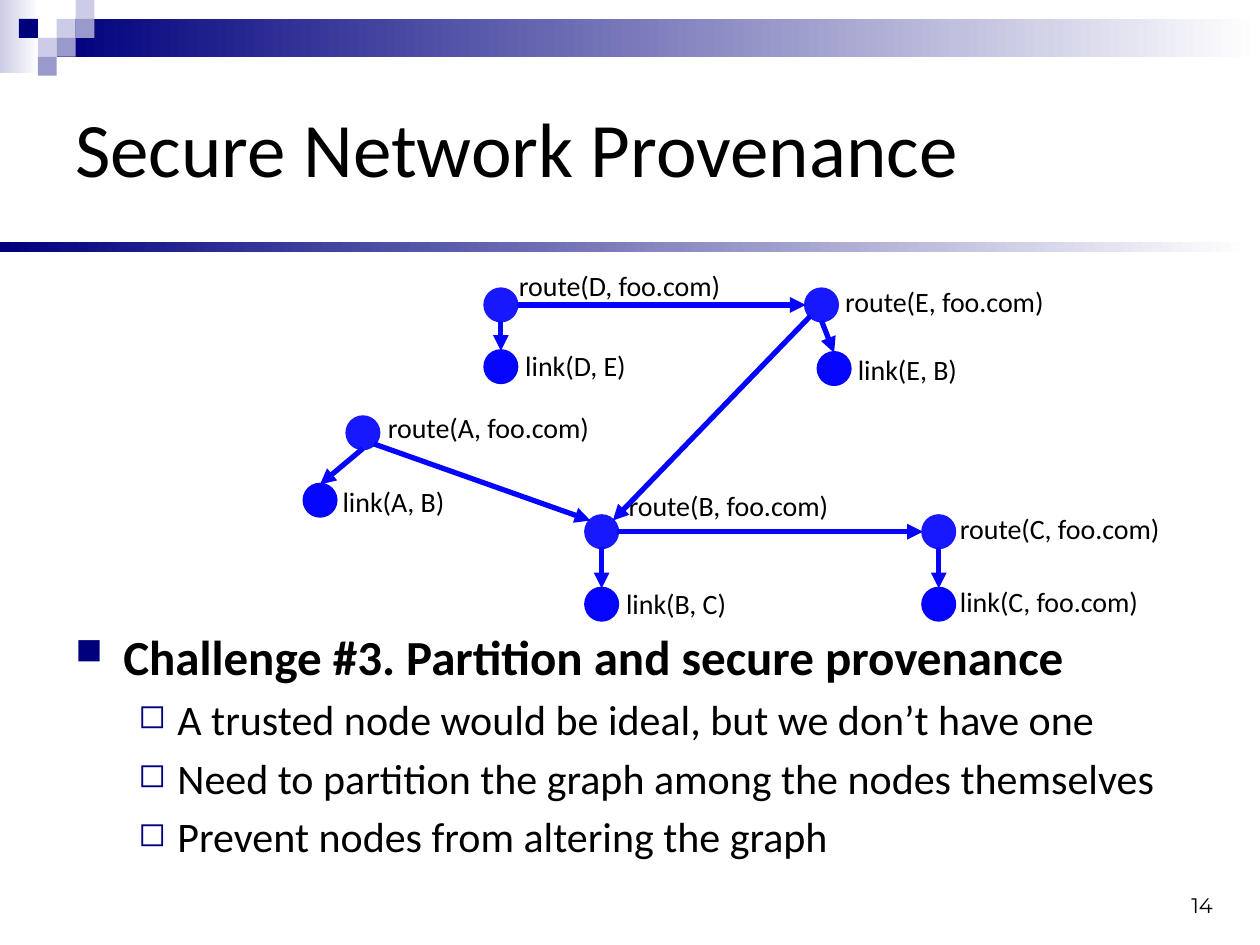
from math import cos, radians, sin

from lxml import etree
from pptx import Presentation
from pptx.dml.color import RGBColor
from pptx.enum.shapes import MSO_CONNECTOR, MSO_SHAPE
from pptx.enum.text import MSO_ANCHOR, MSO_AUTO_SIZE, PP_ALIGN
from pptx.oxml.ns import qn
from pptx.util import Inches, Pt

RECTANGLE, OVAL = MSO_SHAPE.RECTANGLE, MSO_SHAPE.OVAL
STRAIGHT = MSO_CONNECTOR.STRAIGHT
TOP, MIDDLE, BOTTOM = MSO_ANCHOR.TOP, MSO_ANCHOR.MIDDLE, MSO_ANCHOR.BOTTOM
GROW = MSO_AUTO_SIZE.SHAPE_TO_FIT_TEXT
CENTER = PP_ALIGN.CENTER

COLUMNS, ROWS = 100, 75  # square cells of a tenth of an inch
SQUARE = 1.5
RADIUS = 1.25
COLORS = {
    "navy": "00007D", "lilac": "9999CC", "pale": "CCCCE6", "white": "FFFFFF",
    "route": "1818FF", "link": "0505FF", "text": "000000",
}

BANDS = [  # left, top, width, height, first colour
    (0, 0, 3.1, 5.8, "pale"),
    (4.5, 1.5, 95.5, 3, "navy"),
    (0, 19.2, 99.2, 0.8, "navy"),
]
SQUARES = [  # column and row of the corner mosaic, colour
    (3, 1, "pale"), (4, 0, "pale"), (4, 1, "lilac"), (2, 2, "pale"),
    (1, 1, "navy"), (3, 2, "lilac"), (2, 3, "lilac"),
]
NODES = {  # centre, label's left and top, label's width, label
    "route C": (74.5, 42.2, 75.2, 40.1, 18.1, "route(C, foo.com)"),
    "link C": (74.5, 47.95, 75.2, 45.9, 16.3, "link(C, foo.com)"),
    "route B": (47.75, 42.2, 48.9, 38.3, 18.1, "route(B, foo.com)"),
    "link B": (47.75, 47.95, 48.7, 46.1, 10.1, "link(B, C)"),
    "route A": (28.8, 34.35, 29.8, 32.1, 18.2, "route(A, foo.com)"),
    "link A": (25.4, 39.7, 26.2, 38, 10.2, "link(A, B)"),
    "route D": (39.75, 24.2, 40.2, 20.8, 18.2, "route(D, foo.com)"),
    "link D": (39.75, 29.1, 40.7, 27.2, 10.1, "link(D, E)"),
    "route E": (65.2, 24.2, 66.1, 22.1, 18, "route(E, foo.com)"),
    "link E": (66.2, 29.25, 67.1, 27.5, 10, "link(E, B)"),
}
ANGLES = {  # clockwise from the right, in degrees
    "right": 0, "bottom right": 45, "bottom": 90, "bottom left": 135,
    "left": 180, "top left": 225, "top": 270, "top right": 315,
}
ARROWS = [(f"route {name}", "bottom", f"link {name}", "top") for name in "ABCDE"] + [
    ("route A", "bottom right", "route B", "top left"),
    ("route B", "right", "route C", "left"),
    ("route D", "right", "route E", "left"),
    ("route E", "bottom left", "route B", "top right"),
]
CHALLENGE = "Challenge #3. Partition and secure provenance"
POINTS = [
    "A trusted node would be ideal, but we don’t have one",
    "Need to partition the graph among the nodes themselves",
    "Prevent nodes from altering the graph",
]


def cells(*counts):
    return [Inches(count / 10) for count in counts]


def color(name):
    return RGBColor.from_string(COLORS[name])


def add_filled(page, kind, place, fill):
    shape = page.shapes.add_shape(kind, *cells(*place))
    shape.shadow.inherit = False
    shape.fill.solid()
    shape.fill.fore_color.rgb = color(fill)
    shape.line.fill.background()
    return shape


def add_band(page, left, top, width, height, start):
    band = add_filled(page, RECTANGLE, (left, top, width, height), start)
    band.fill.gradient()
    band.fill.gradient_angle = 0
    for stop, name, position in zip(band.fill.gradient_stops, (start, "white"), (0, 1)):
        stop.color.rgb = color(name)
        stop.position = position


def style(para, size, font="Calibri", bold=False):
    para.font.size = Pt(size)
    para.font.name = font
    para.font.bold = bold
    para.font.color.rgb = color("text")


def add_text(page, place, text, size, font="Calibri", anchor=TOP, wrap=True):
    box = page.shapes.add_textbox(*cells(*place))
    frame = box.text_frame
    frame.word_wrap = wrap
    frame.vertical_anchor = anchor
    para = frame.paragraphs[0]
    para.text = text
    style(para, size, font)
    return frame


def add_bullet(para, mark, percent, margin, indent):
    """Hang a navy mark before the paragraph, with space above it by share of text size."""
    props = para._p.get_or_add_pPr()
    props.set("marL", str(Inches(margin)))
    props.set("indent", str(Inches(-indent)))
    before = etree.SubElement(props, qn("a:spcBef"))
    etree.SubElement(before, qn("a:spcPct"), val="20000")
    tint = etree.SubElement(props, qn("a:buClr"))
    etree.SubElement(tint, qn("a:srgbClr"), val=COLORS["navy"])
    etree.SubElement(props, qn("a:buSzPct"), val=str(percent * 1000))
    etree.SubElement(props, qn("a:buChar"), char=mark)
    # Default run properties have to follow the bullet.
    props.append(props.find(qn("a:defRPr")))


def add_body(page):
    frame = add_text(page, (5, 49.2, 92.5, 20.8), CHALLENGE, 28)
    heading = frame.paragraphs[0]
    style(heading, 28, bold=True)
    add_bullet(heading, "■", 75, 0.38, 0.38)
    for point in POINTS:
        para = frame.add_paragraph()
        para.text = point
        para.level = 1
        style(para, 24)
        add_bullet(para, "◻", 80, 0.81, 0.31)


def add_node(page, name):
    x, y, left, top, width, label = NODES[name]
    kind = name.split()[0]
    place = (x - RADIUS, y - RADIUS, 2 * RADIUS, 2 * RADIUS)
    node = add_filled(page, OVAL, place, kind)
    node.line.color.rgb = color(kind)
    node.line.width = Pt(2)
    frame = add_text(page, (left, top, width, 3.7), label, 16, wrap=False)
    frame.auto_size = GROW


def rim_point(name, side):
    x, y = NODES[name][:2]
    angle = radians(ANGLES[side])
    return cells(x + RADIUS * cos(angle), y + RADIUS * sin(angle))


def add_arrow(page, source, source_side, target, target_side):
    ends = rim_point(source, source_side) + rim_point(target, target_side)
    arrow = page.shapes.add_connector(STRAIGHT, *ends)
    arrow.line.color.rgb = color("link")
    arrow.line.width = Pt(3)
    etree.SubElement(arrow.line._get_or_add_ln(), qn("a:tailEnd"), type="triangle")
    etree.SubElement(arrow._element.spPr, qn("a:effectLst"))


def main():
    deck = Presentation()
    deck.slide_width, deck.slide_height = cells(COLUMNS, ROWS)
    page = deck.slides.add_slide(deck.slide_layouts[6])

    for band in BANDS:
        add_band(page, *band)
    for column, row, fill in SQUARES:
        place = (column * SQUARE, row * SQUARE, SQUARE, SQUARE)
        add_filled(page, RECTANGLE, place, fill)

    add_text(page, (5, 5, 90, 13.3), "Secure Network Provenance", 44, anchor=MIDDLE)
    add_body(page)
    number = add_text(page, (90.8, 68.3, 9.2, 5), "14", 12, "Montserrat", BOTTOM)
    number.paragraphs[0].alignment = CENTER

    for name in NODES:
        add_node(page, name)
    for arrow in ARROWS:
        add_arrow(page, *arrow)
    deck.save("out.pptx")


if __name__ == "__main__":
    main()
